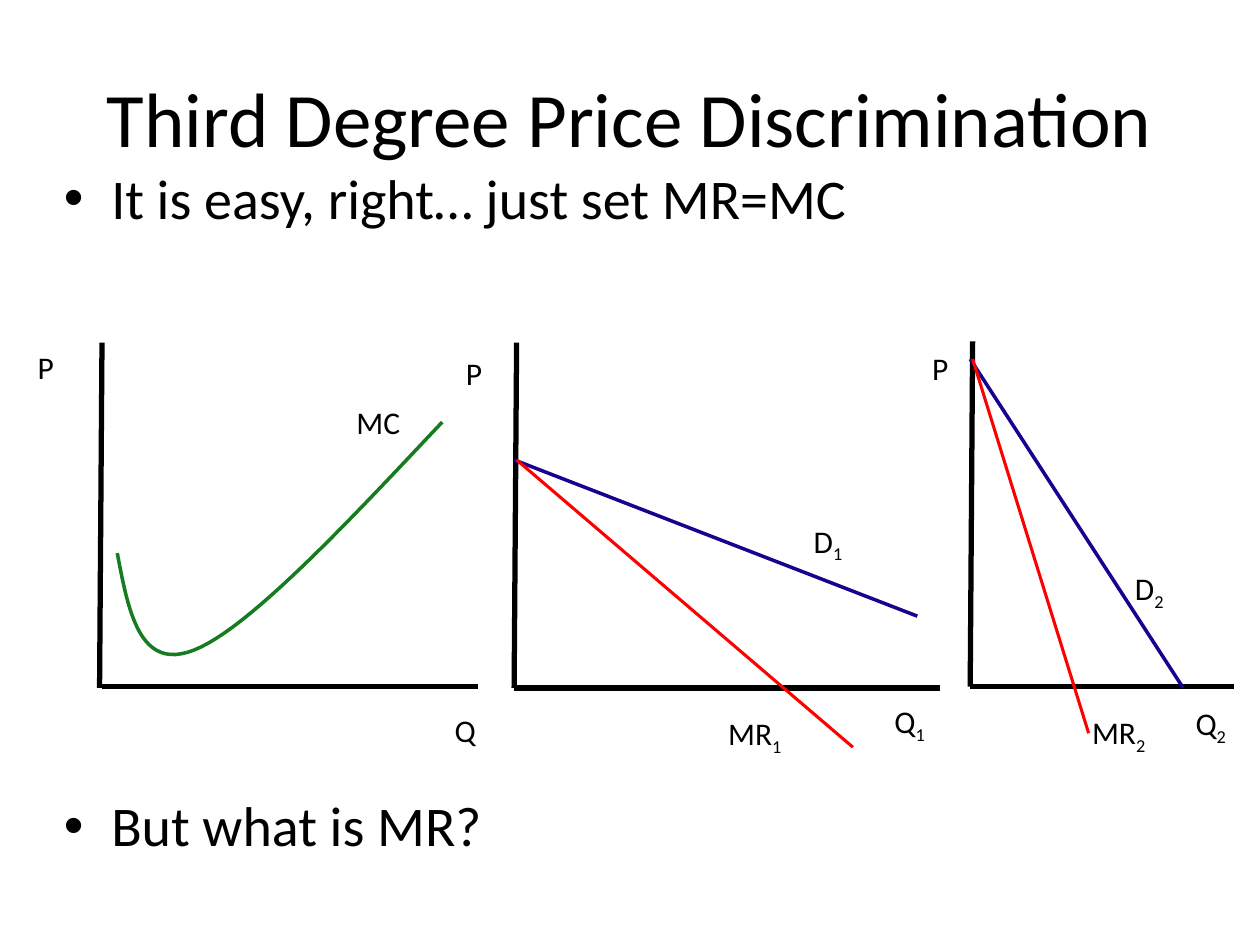
import pptx
import pptx.util
import pptx.dml.color
import pptx.enum.shapes
import pptx.enum.text
import pptx.oxml.ns
import lxml.etree

Pt = pptx.util.Pt
ANCHOR = pptx.enum.text.MSO_ANCHOR
ALIGN = pptx.enum.text.PP_ALIGN
FIT = pptx.enum.text.MSO_AUTO_SIZE

COLORS = {"ink": "000000", "cost": "177B21", "demand": "1C0191", "gain": "FF0000"}
WIDTHS = {"ink": 3, "cost": 2, "demand": 2, "gain": 1.75}

TITLE = "Third Degree Price Discrimination"
POINTS = [("It is easy, right… just set MR=MC", 0), ("But what is MR?", 320)]

RISE, LEAN = 197.3, 1.4
AXES = [
    {"x": 56.9, "y": 393.1, "foot": (58.3, 392.4), "end": 272.9},
    {"x": 293.8, "y": 393.1, "foot": (293.8, 393.1), "end": 537.1},
    {"x": 554.4, "y": 392.4, "foot": (554.4, 392.4), "end": 704.9},
]
CURVES = [
    ("demand", (293.8, 262.8), (524.2, 352.1)),
    ("demand", (554.4, 205.2), (676.1, 393.1)),
    ("gain", (295.2, 262.8), (487.4, 427)),
    ("gain", (555.8, 205.2), (622.1, 419)),
]
COST = [
    ((67, 316.1), (73.4, 349.9), (79.9, 383.8), (110.9, 371.5)),
    ((110.9, 371.5), (141.8, 359.3), (197.3, 300.2), (252.7, 241.2)),
]
STEPS = 24

LABELS = [
    ("P", "", 14.4, 195.1, 23.8), ("P", "", 259.2, 198.7, 23.8),
    ("P", "", 525.6, 195.8, 23.8), ("Q", "", 252.7, 402.5, 26.6),
    ("Q", "1", 504, 397.4, 33.1), ("Q", "2", 676.1, 398.9, 33.1),
    ("MC", "", 196.6, 226.8, 39.6), ("D", "1", 457.9, 294.5, 31.7),
    ("D", "2", 641.5, 321.8, 31.7), ("MR", "1", 409, 404.6, 46.1),
    ("MR", "2", 617, 403.9, 46.1),
]


def tint(name):
    return pptx.dml.color.RGBColor.from_string(COLORS[name])


def apply(thing, **values):
    for key, value in values.items():
        setattr(thing, key, value)


def add_box(slide, place, **values):
    frame = slide.shapes.add_textbox(*map(Pt, place)).text_frame
    apply(frame, **values)
    return frame


def add_run(para, text, size):
    run = para.add_run()
    run.text = text
    apply(run.font, name="Calibri", size=Pt(size))
    run.font.color.rgb = tint("ink")
    return run


def ink_line(shape, kind):
    apply(shape.line, width=Pt(WIDTHS[kind]))
    shape.line.color.rgb = tint(kind)


def add_line(slide, kind, start, end):
    line = slide.shapes.add_connector(
        pptx.enum.shapes.MSO_CONNECTOR.STRAIGHT, *map(Pt, start + end))
    ink_line(line, kind)
    lxml.etree.SubElement(line._element.spPr, pptx.oxml.ns.qn("a:effectLst"))


def bend(knots, t):
    parts = ((1 - t) ** 3, 3 * t * (1 - t) ** 2, 3 * t * t * (1 - t), t ** 3)
    return tuple(Pt(sum(p * k[i] for p, k in zip(parts, knots))) for i in (0, 1))


def add_cost(slide):
    dots = [bend(knots, n / STEPS) for knots in COST for n in range(1, STEPS + 1)]
    path = slide.shapes.build_freeform(*bend(COST[0], 0))
    path.add_line_segments(dots, close=False)
    curve = path.convert_to_shape()
    curve.fill.background()
    curve.shadow.inherit = False
    ink_line(curve, "cost")


def add_points(slide):
    frame = add_box(slide, (29.5, 90, 648, 356.4), word_wrap=True)
    for n, (text, gap) in enumerate(POINTS):
        para = frame.add_paragraph() if n else frame.paragraphs[0]
        para.space_before = Pt(gap)
        props = para._p.get_or_add_pPr()
        for key, value in {"marL": Pt(27), "indent": -Pt(27)}.items():
            props.set(key, str(value))
        for tag, key, value in (("a:buFont", "typeface", "Arial"), ("a:buChar", "char", "•")):
            lxml.etree.SubElement(props, pptx.oxml.ns.qn(tag)).set(key, value)
        add_run(para, text, 32)


def main():
    deck = pptx.Presentation()
    apply(deck, slide_width=Pt(720), slide_height=Pt(540))
    slide = deck.slides.add_slide(deck.slide_layouts[6])

    head = add_box(slide, (36, 21.6, 648, 90), word_wrap=True,
                   vertical_anchor=ANCHOR.MIDDLE).paragraphs[0]
    head.alignment = ALIGN.CENTER
    add_run(head, TITLE, 44)
    add_points(slide)

    for axis in AXES:
        x, y, foot = axis["x"], axis["y"], axis["foot"]
        add_line(slide, "ink", (x + LEAN, y - RISE), (x, y))
        add_line(slide, "ink", foot, (axis["end"], foot[1]))
    for curve in CURVES:
        add_line(slide, *curve)
    add_cost(slide)

    for text, sub, x, y, wide in LABELS:
        para = add_box(slide, (x, y, wide, 29), word_wrap=False,
                       auto_size=FIT.SHAPE_TO_FIT_TEXT).paragraphs[0]
        add_run(para, text, 18)
        if sub:
            add_run(para, sub, 18).font._element.set("baseline", "-25000")

    deck.save("out.pptx")


if __name__ == "__main__":
    main()
